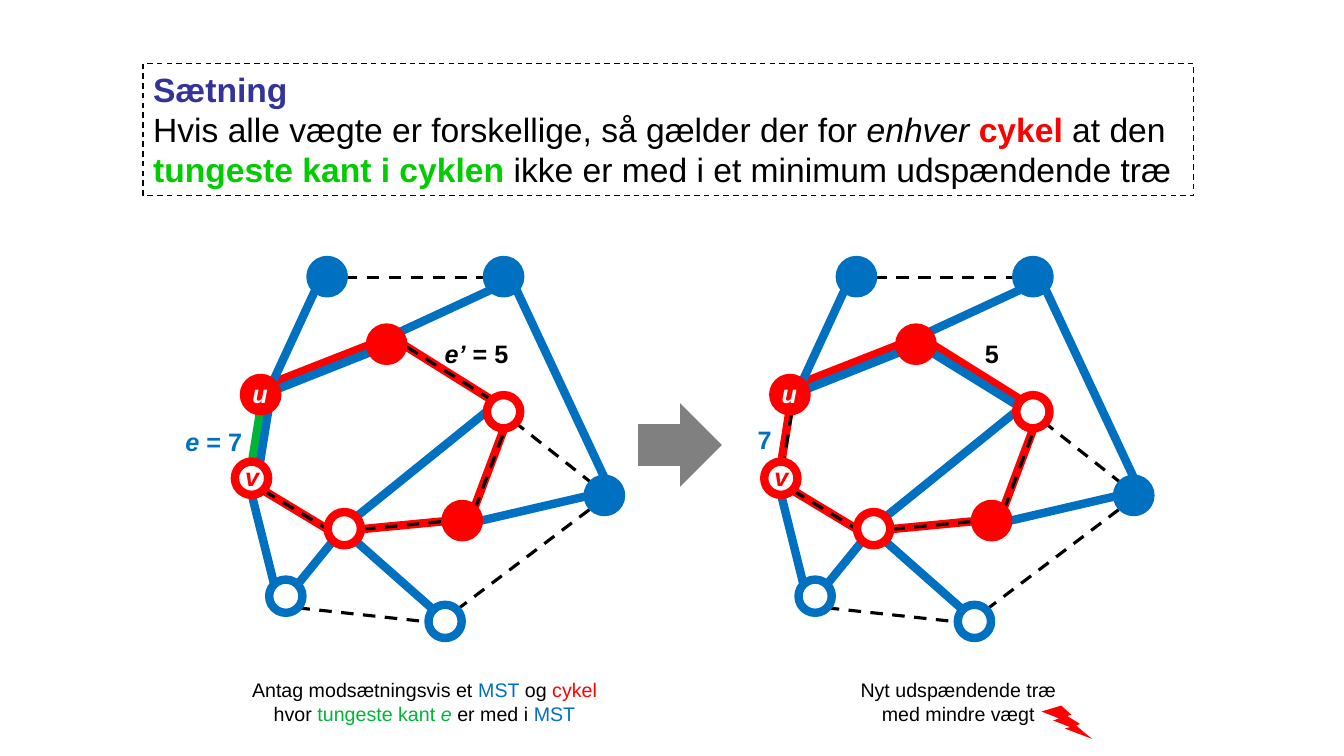
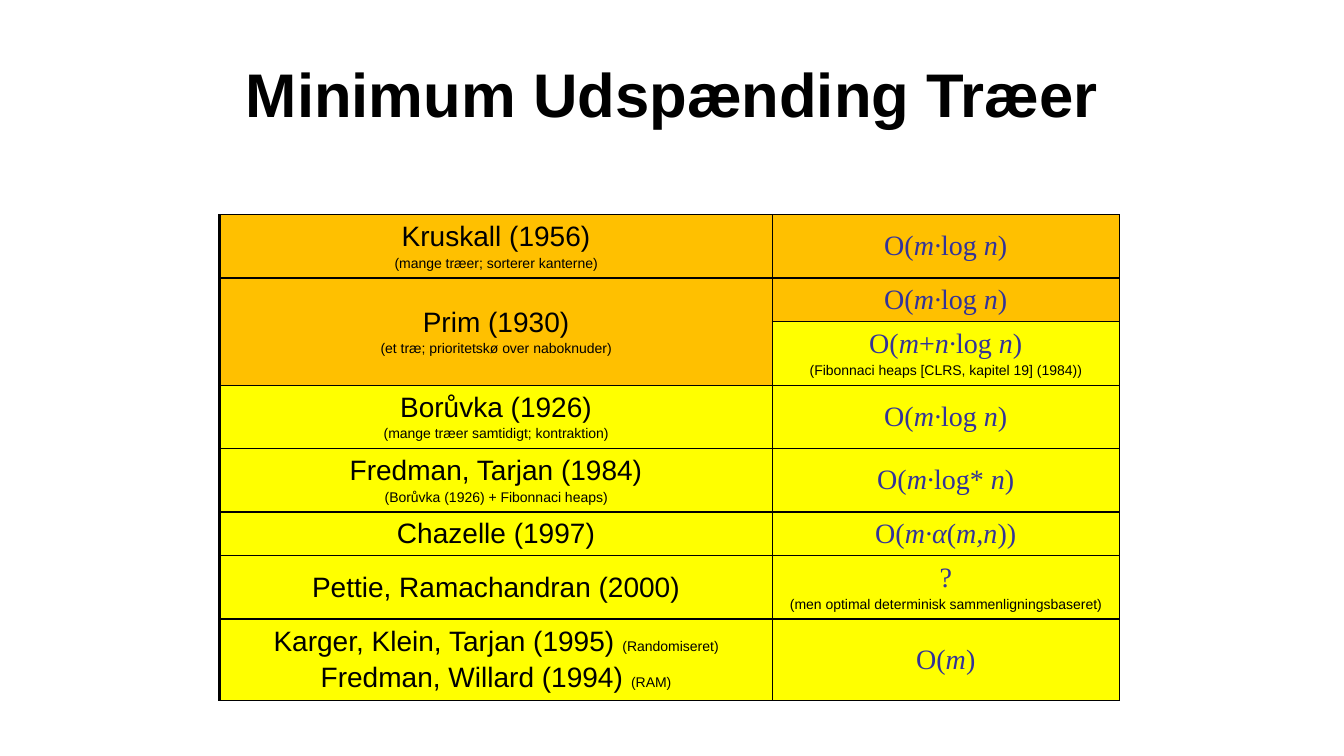
"""Builds two slides on minimum spanning trees: a cycle theorem and a table of algorithms."""
from lxml import etree
from pptx import Presentation
from pptx.dml.color import RGBColor
from pptx.enum.dml import MSO_LINE
from pptx.enum.shapes import MSO_CONNECTOR, MSO_SHAPE
from pptx.enum.text import MSO_ANCHOR, PP_ALIGN
from pptx.oxml.ns import qn
from pptx.util import Inches, Pt

LEFT, CENTER, RIGHT = PP_ALIGN.LEFT, PP_ALIGN.CENTER, PP_ALIGN.RIGHT
MIDDLE, DASH = MSO_ANCHOR.MIDDLE, MSO_LINE.DASH
RECTANGLE, ELLIPSE = MSO_SHAPE.RECTANGLE, MSO_SHAPE.OVAL
ARROW, BOLT = MSO_SHAPE.RIGHT_ARROW, MSO_SHAPE.LIGHTNING_BOLT
STRAIGHT = MSO_CONNECTOR.STRAIGHT

BLACK = RGBColor(0x00, 0x00, 0x00)
WHITE = RGBColor(0xFF, 0xFF, 0xFF)
BLUE = RGBColor(0x00, 0x70, 0xC0)
RED = RGBColor(0xFF, 0x00, 0x00)
GREEN = RGBColor(0x00, 0xB4, 0x38)
LIME = RGBColor(0x00, 0xCC, 0x00)
INDIGO = RGBColor(0x33, 0x33, 0x99)
GRAY = RGBColor(0x80, 0x80, 0x80)
ORANGE = RGBColor(0xFF, 0xC0, 0x00)
YELLOW = RGBColor(0xFF, 0xFF, 0x00)
SANS, SERIF = "Arial", "Times New Roman"

SLIDE_W, SLIDE_H = 13.33, 7.5
NODE_SIZE, GRAPH_SHIFT = 0.33, 5.25
HEAVY, THIN = 6, 2.25

THEOREM = [
    [("Sætning", {"color": INDIGO, "bold": True})],
    [("Hvis alle vægte er forskellige, så gælder der for ", {}),
     ("enhver ", {"italic": True}),
     ("cykel ", {"color": RED, "bold": True}),
     ("at den ", {}),
     ("tungeste kant i cyklen", {"color": LIME, "bold": True}),
     (" ikke er med i et minimum udspændende træ", {})],
]
ASSUMPTION = [[
    ("Antag modsætningsvis et ", {}), ("MST ", {"color": BLUE}), ("og ", {}),
    ("cykel ", {"color": RED}), ("hvor ", {}), ("tungeste kant ", {"color": GREEN}),
    ("e", {"color": GREEN, "italic": True}), (" er med i ", {}), ("MST", {"color": BLUE}),
]]
CONCLUSION = [[("Nyt udspændende træ med mindre vægt", {})]]

NODES = [
    (3.08, 2.58, BLUE, True), (4.83, 2.58, BLUE, True), (5.83, 4.75, BLUE, True),
    (2.67, 5.75, BLUE, False), (4.25, 6, BLUE, False),
    (3.67, 3.25, RED, True), (2.42, 3.75, RED, True), (4.42, 5, RED, True),
    (4.83, 3.92, RED, False), (2.33, 4.58, RED, False), (3.25, 5.08, RED, False),
]
CYCLE_EDGES = [
    (3.58, 5.25, 4.42, 5.17), (4.7, 5.05, 5, 4.25), (4.88, 3.97, 4, 3.42),
    (3.67, 3.42, 2.7, 3.8), (2.62, 4.87, 3.25, 5.25),
]
UNUSED_EDGES = [
    (3.42, 2.75, 4.83, 2.75), (2.95, 6.03, 4.25, 6.17), (5.88, 4.8, 5.12, 4.2),
    (4.53, 6.05, 5.88, 5.03), (3.6, 5.25, 4.43, 5.17), (4.71, 5.05, 5.01, 4.25),
    (2.62, 4.87, 3.25, 5.25),
]
TREE_EDGES = [
    (4.83, 4.08, 3.53, 5.13), (3.13, 2.87, 2.7, 3.8), (4.88, 2.87, 3.95, 3.3),
    (4.3, 6.05, 3.53, 5.37), (3.71, 3.48, 2.75, 3.86), (6, 4.75, 5.12, 2.87),
    (4.75, 5.17, 5.83, 4.92), (2.95, 5.8, 3.3, 5.37), (2.72, 5.8, 2.5, 4.92),
]
HEAVIEST_EDGE = (2.58, 4.08, 2.5, 4.58)
BOLD = {"bold": True}
BOLD_ITALIC = {"bold": True, "italic": True}
NODE_LABELS = [
    ((2.25, 4.53, 0.5, 0.42), [("v", {"color": RED, **BOLD_ITALIC})], CENTER),
    ((2.33, 3.7, 0.5, 0.42), [("u", {"color": WHITE, **BOLD_ITALIC})], CENTER),
]
GRAPHS = [
    {"shift": 0, "heaviest": GREEN,
     "unused": [(4.88, 3.97, 4, 3.42)], "tree": [(2.66, 4.08, 2.58, 4.58)],
     "labels": [
         ((1.58, 4.18, 0.92, 0.4),
          [("e", {"color": BLUE, **BOLD_ITALIC}), (" = 7", {"color": BLUE, **BOLD})], RIGHT),
         ((4.22, 3.31, 0.92, 0.4), [("e’", BOLD_ITALIC), (" = 5", BOLD)], RIGHT)]},
    {"shift": GRAPH_SHIFT, "heaviest": RED,
     "unused": [(2.6, 4.1, 2.52, 4.6)], "tree": [(4.87, 4.04, 3.98, 3.49)],
     "labels": [
         ((1.58, 4.16, 0.92, 0.4), [("7", {"color": BLUE, **BOLD})], RIGHT),
         ((4.42, 3.31, 0.33, 0.4), [("5", BOLD)], LEFT)]},
]


def formula(*parts):
    """Alternates upright and italic parts."""
    return [(part, {"font": SERIF, "color": INDIGO, "italic": index % 2 == 1})
            for index, part in enumerate(parts)]


def big(text):
    """One run at table size."""
    return (text, {})


def small(text):
    """One run at remark size."""
    return (text, {"size": 10})


M_LOG_N = formula("O(", "m·", "log ", "n", ")")
TABLE_TITLE = "Minimum Udspænding Træer"
COLUMN_WIDTHS = [5.48, 3.44]
ROW_ONE_LINE, ROW_REMARK, ROW_TWO_LINES = 0.41, 0.59, 0.77
ALGORITHMS = [
    (ROW_REMARK, ORANGE, [[big("Kruskall (1956)")], [small("(mange træer; sorterer kanterne)")]],
     ORANGE, [M_LOG_N]),
    (ROW_ONE_LINE, ORANGE,
     [[big("Prim (1930)")], [small("(et træ; prioritetskø over naboknuder)")]],
     ORANGE, [M_LOG_N]),
    (ROW_REMARK, ORANGE, None, YELLOW,
     [formula("O(", "m", "+", "n·", "log ", "n", ")"),
      [small("(Fibonnaci heaps [CLRS, kapitel 19] (1984))")]]),
    (ROW_REMARK, YELLOW,
     [[big("Borůvka (1926)")], [small("(mange træer samtidigt; kontraktion)")]],
     YELLOW, [M_LOG_N]),
    (ROW_REMARK, YELLOW,
     [[big("Fredman, Tarjan (1984)")], [small("(Borůvka (1926) + Fibonnaci heaps)")]],
     YELLOW, [formula("O(", "m·", "log* ", "n", ")")]),
    (ROW_ONE_LINE, YELLOW, [[big("Chazelle (1997)")]],
     YELLOW, [formula("O(", "m·α", "(", "m,n", "))")]),
    (ROW_REMARK, YELLOW, [[big("Pettie, Ramachandran (2000)")]],
     YELLOW, [formula("?"), [small("(men optimal determinisk sammenligningsbaseret)")]]),
    (ROW_TWO_LINES, YELLOW,
     [[big("Karger, Klein, Tarjan (1995) "), small("(Randomiseret)")],
      [big("Fredman, Willard (1994) "), small("(RAM)")]],
     YELLOW, [formula("O(", "m", ")")]),
]


def write(frame, paragraphs, size, align=LEFT, gap=0):
    frame.word_wrap = True
    for index, runs in enumerate(paragraphs):
        paragraph = frame.paragraphs[0] if index == 0 else frame.add_paragraph()
        paragraph.alignment = align
        first_size = runs[0][1].get("size", size)
        paragraph.space_before = Pt(round(gap * first_size))
        for text, style in runs:
            run = paragraph.add_run()
            run.text = text
            font = run.font
            font.name = style.get("font", SANS)
            font.size = Pt(style.get("size", size))
            font.bold = style.get("bold", False)
            font.italic = style.get("italic", False)
            font.color.rgb = style.get("color", BLACK)


def add_text(slide, box, paragraphs, size, align=LEFT):
    frame = slide.shapes.add_textbox(*map(Inches, box)).text_frame
    write(frame, paragraphs, size, align)
    return frame


def add_figure(slide, kind, box, fill=None, line=None, width=1):
    figure = slide.shapes.add_shape(kind, *map(Inches, box))
    figure.shadow.inherit = False
    if fill is None:
        figure.fill.background()
    else:
        figure.fill.solid()
        figure.fill.fore_color.rgb = fill
    if line is None:
        figure.line.fill.background()
    else:
        figure.line.color.rgb = line
        figure.line.width = Pt(width)
    return figure


def add_edges(slide, edges, shift, color, width=HEAVY, dash=None):
    for x1, y1, x2, y2 in edges:
        edge = slide.shapes.add_connector(
            STRAIGHT, *map(Inches, (x1 + shift, y1, x2 + shift, y2)))
        edge.line.color.rgb = color
        edge.line.width = Pt(width)
        if dash is not None:
            edge.line.dash_style = dash
        etree.SubElement(edge._element.spPr, qn("a:effectLst"))


def add_graph(slide, graph):
    shift = graph["shift"]
    add_edges(slide, [HEAVIEST_EDGE], shift, graph["heaviest"])
    add_edges(slide, CYCLE_EDGES, shift, RED)
    add_edges(slide, UNUSED_EDGES + graph["unused"], shift, BLACK, THIN, DASH)
    add_edges(slide, TREE_EDGES + graph["tree"], shift, BLUE)
    for x, y, color, filled in NODES:
        add_figure(slide, ELLIPSE, (x + shift, y, NODE_SIZE, NODE_SIZE),
                   color if filled else None, color, HEAVY)
    for (x, y, w, h), runs, align in NODE_LABELS + graph["labels"]:
        add_text(slide, (x + shift, y, w, h), [runs], 18, align)


def add_theorem_slide(deck):
    slide = deck.slides.add_slide(deck.slide_layouts[6])
    theorem = add_figure(slide, RECTANGLE, (1.42, 0.63, 10.42, 1.31), line=BLACK)
    theorem.line.dash_style = DASH
    theorem.text_frame.vertical_anchor = MSO_ANCHOR.TOP
    write(theorem.text_frame, THEOREM, 24)
    for graph in GRAPHS:
        add_graph(slide, graph)
    add_figure(slide, ARROW, (6.33, 4, 0.83, 0.83), GRAY)
    add_text(slide, (2.25, 6.68, 3.92, 0.57), ASSUMPTION, 14, CENTER)
    add_text(slide, (8.42, 6.68, 2.17, 0.57), CONCLUSION, 14, CENTER)
    add_figure(slide, BOLT, (10.33, 7, 0.5, 0.33), RED)


def add_borders(cell, widths):
    properties = cell._tc.get_or_add_tcPr()
    for side, width in widths.items():
        border = etree.SubElement(properties, qn(f"a:ln{side}"), w=str(Pt(width)))
        fill = etree.SubElement(border, qn("a:solidFill"))
        etree.SubElement(fill, qn("a:srgbClr"), val=str(BLACK))


def add_algorithm_slide(deck):
    slide = deck.slides.add_slide(deck.slide_layouts[6])
    title = add_text(slide, (0.67, 0.3, 12, 1.25), [[(TABLE_TITLE, BOLD)]], 44, CENTER)
    title.vertical_anchor = MIDDLE
    heights = [row[0] for row in ALGORITHMS]
    box = (2.18, 2.13, sum(COLUMN_WIDTHS), sum(heights))
    table = slide.shapes.add_table(
        len(ALGORITHMS), len(COLUMN_WIDTHS), *map(Inches, box)).table
    table.first_row = table.horz_banding = False
    for column, width in zip(table.columns, COLUMN_WIDTHS):
        column.width = Inches(width)
    for r, (height, name_fill, name, time_fill, time) in enumerate(ALGORITHMS):
        table.rows[r].height = Inches(height)
        for c, (fill, paragraphs) in enumerate([(name_fill, name), (time_fill, time)]):
            cell = table.cell(r, c)
            add_borders(cell, {"L": THIN if c == 0 else 1, "R": 1, "T": 1, "B": 1})
            cell.fill.solid()
            cell.fill.fore_color.rgb = fill
            cell.vertical_anchor = MIDDLE
            if paragraphs is None:
                table.cell(r - 1, c).merge(cell)
            else:
                write(cell.text_frame, paragraphs, 20, CENTER, gap=0.15)


def main():
    deck = Presentation()
    deck.slide_width, deck.slide_height = Inches(SLIDE_W), Inches(SLIDE_H)
    add_theorem_slide(deck)
    add_algorithm_slide(deck)
    deck.save("out.pptx")


if __name__ == "__main__":
    main()
